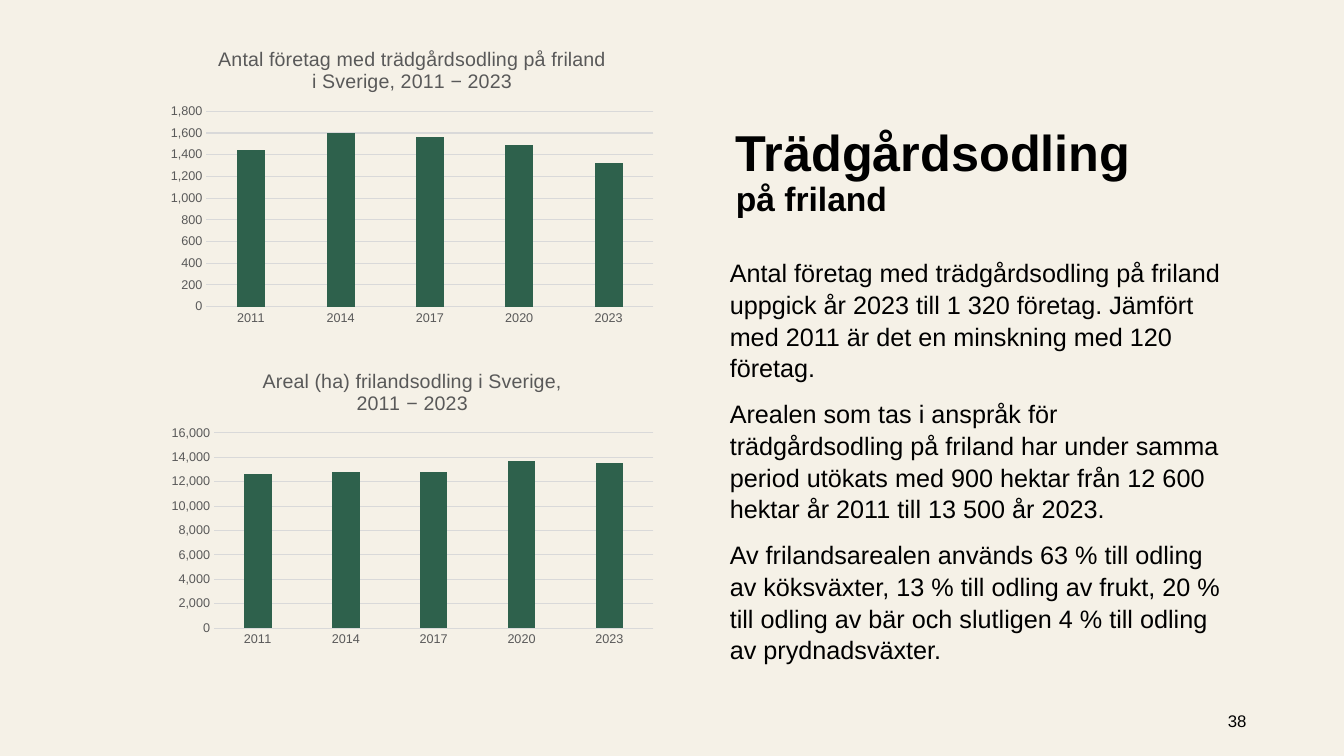
"""Build the slide on outdoor horticulture in Sweden, with two column charts."""
from lxml import etree
from pptx import Presentation
from pptx.chart.data import CategoryChartData
from pptx.dml.color import RGBColor
from pptx.enum.chart import XL_CHART_TYPE, XL_TICK_MARK
from pptx.enum.text import MSO_ANCHOR, PP_ALIGN
from pptx.oxml import parse_xml
from pptx.oxml.ns import nsdecls
from pptx.util import Inches, Pt

COLUMNS = XL_CHART_TYPE.COLUMN_CLUSTERED
NO_TICK = XL_TICK_MARK.NONE
TOP, MIDDLE, BOTTOM = MSO_ANCHOR.TOP, MSO_ANCHOR.MIDDLE, MSO_ANCHOR.BOTTOM
LEFT, CENTER = PP_ALIGN.LEFT, PP_ALIGN.CENTER

COLORS = {"background": "F5F1E7", "text": "000000", "label": "595959",
          "grid": "D9D9D9", "column": "2E614C"}
YEARS = ["2011", "2014", "2017", "2020", "2023"]
PLOT_RIGHT = 0.98


def style_font(font, size, color="text", bold=False):
    formats = {"name": "Arial", "size": Pt(size), "bold": bold}
    for attribute, value in formats.items():
        setattr(font, attribute, value)
    font.color.rgb = RGBColor.from_string(COLORS[color])


def add_text(box, paragraphs, anchor=TOP, align=LEFT, line_spacing=1.0):
    frame = slide.shapes.add_textbox(*map(Inches, box)).text_frame
    frame.word_wrap = True
    frame.vertical_anchor = anchor
    for index, runs in enumerate(paragraphs):
        paragraph = frame.paragraphs[0] if index == 0 else frame.add_paragraph()
        paragraph.alignment = align
        paragraph.line_spacing = line_spacing
        paragraph.space_before = Pt(10 if index else 0)
        for position, (text, size, bold) in enumerate(runs):
            if position:
                paragraph.add_line_break()
            run = paragraph.add_run()
            run.text = text
            style_font(run.font, size, bold=bold)


presentation = Presentation()
presentation.slide_width = Inches(13.33)
presentation.slide_height = Inches(7.5)
slide = presentation.slides.add_slide(presentation.slide_layouts[6])
slide.background.fill.solid()
slide.background.fill.fore_color.rgb = RGBColor.from_string(COLORS["background"])

add_text((7.2, 1, 4.97, 1.22),
         [[("Trädgårdsodling", 36, True), ("på friland", 24, True)]],
         anchor=BOTTOM, line_spacing=0.9)

findings = [
    "Antal företag med trädgårdsodling på friland uppgick år 2023 till 1 320 "
    "företag. Jämfört med 2011 är det en minskning med 120 företag.",
    "Arealen som tas i anspråk för trädgårdsodling på friland har under samma "
    "period utökats med 900 hektar från 12 600 hektar år 2011 till 13 500 år 2023.",
    "Av frilandsarealen används 63 % till odling av köksväxter, 13 % till odling "
    "av frukt, 20 % till odling av bär och slutligen 4 % till odling av prydnadsväxter.",
]
add_text((7.14, 2.49, 5.1, 4.2), [[(finding, 18, False)] for finding in findings],
         line_spacing=1.05)
add_text((11.69, 6.95, 1.16, 0.4), [[("38", 12, False)]], MIDDLE, CENTER)

statistics = [
    (0.32, ["Antal företag med trädgårdsodling på friland", "i Sverige, 2011 − 2023"],
     [1440, 1600, 1560, 1490, 1320], 1800, 200, 0.09),
    (3.51, ["Areal (ha) frilandsodling i Sverige,", "2011 − 2023"],
     [12600, 12800, 12800, 13700, 13500], 16000, 2000, 0.105),
]
for top, title_lines, values, maximum, step, plot_left in statistics:
    data = CategoryChartData(number_format="#,##0")
    data.categories = YEARS
    data.add_series("Series 1", values)
    chart = slide.shapes.add_chart(COLUMNS, Inches(1.6), Inches(top),
                                   Inches(4.98), Inches(2.96), data).chart
    style_font(chart.font, 10)
    chart.has_legend = False
    chart.has_title = True
    title = chart.chart_title.text_frame
    for index, line in enumerate(title_lines):
        paragraph = title.paragraphs[0] if index == 0 else title.add_paragraph()
        run = paragraph.add_run()
        run.text = line
        for font in (paragraph.font, run.font):
            style_font(font, 14, "label")
    chart.chart_title.include_in_layout = False

    plot = chart.plots[0]
    for attribute, value in {"gap_width": 219, "overlap": -27,
                             "vary_by_categories": False}.items():
        setattr(plot, attribute, value)
    fill = plot.series[0].format.fill
    fill.solid()
    fill.fore_color.rgb = RGBColor.from_string(COLORS["column"])

    years_axis, amount_axis = chart.category_axis, chart.value_axis
    for axis in (years_axis, amount_axis):
        axis.major_tick_mark = NO_TICK
        axis.minor_tick_mark = NO_TICK
        style_font(axis.tick_labels.font, 9, "label")
    for attribute, value in {"minimum_scale": 0, "maximum_scale": maximum,
                             "major_unit": step,
                             "has_major_gridlines": True}.items():
        setattr(amount_axis, attribute, value)
    amount_axis.tick_labels.number_format = "#,##0"
    amount_axis.tick_labels.number_format_is_linked = False
    amount_axis.format.line.fill.background()
    for line in (years_axis.format.line, amount_axis.major_gridlines.format.line):
        line.width = Pt(0.75)
        line.color.rgb = RGBColor.from_string(COLORS["grid"])

    plot_area = chart.element.chart.plotArea
    for layout in plot_area.xpath("c:layout"):
        plot_area.remove(layout)
    layout = parse_xml(f"<c:layout {nsdecls('c')}><c:manualLayout/></c:layout>")
    settings = {"layoutTarget": "inner", "xMode": "edge", "yMode": "edge",
                "x": plot_left, "y": 0.265, "w": PLOT_RIGHT - plot_left, "h": 0.655}
    for tag, value in settings.items():
        setting = etree.SubElement(layout[0], f"{{{layout.nsmap['c']}}}{tag}")
        setting.set("val", str(value))
    plot_area.insert(0, layout)

presentation.save("out.pptx")
